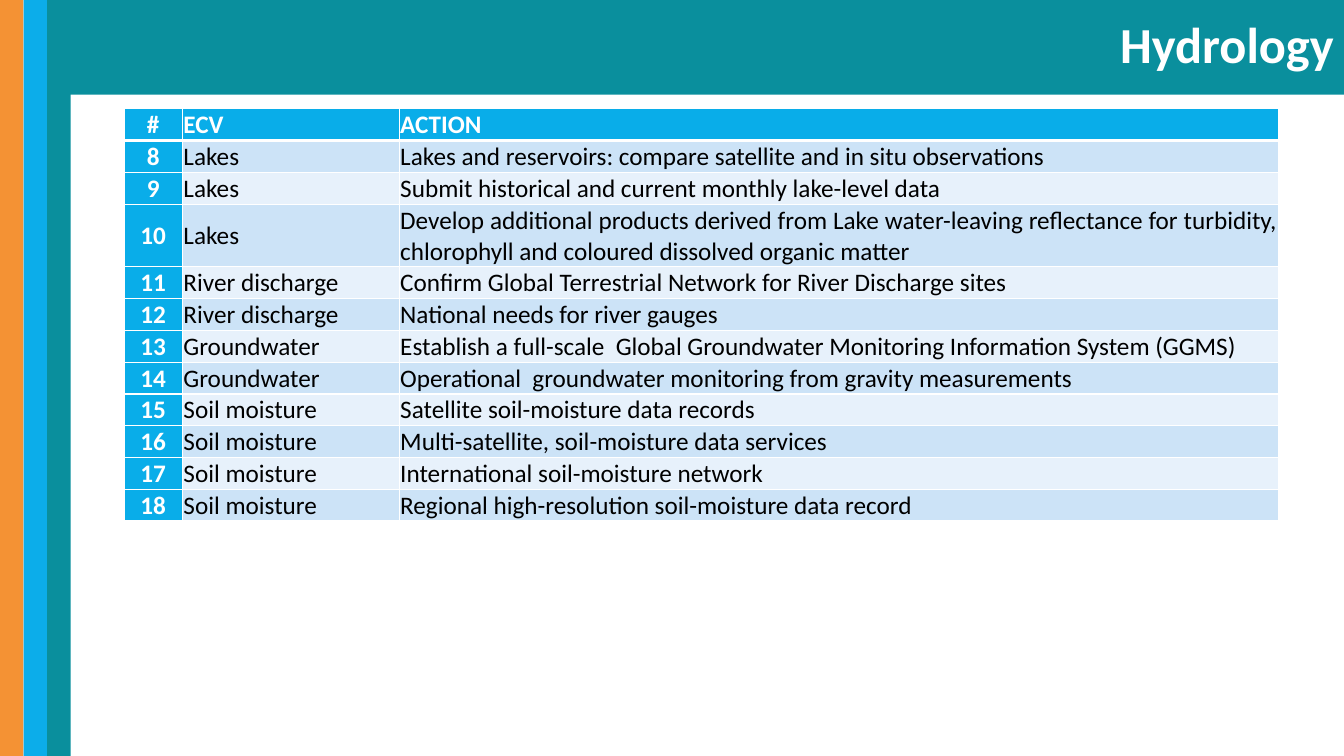
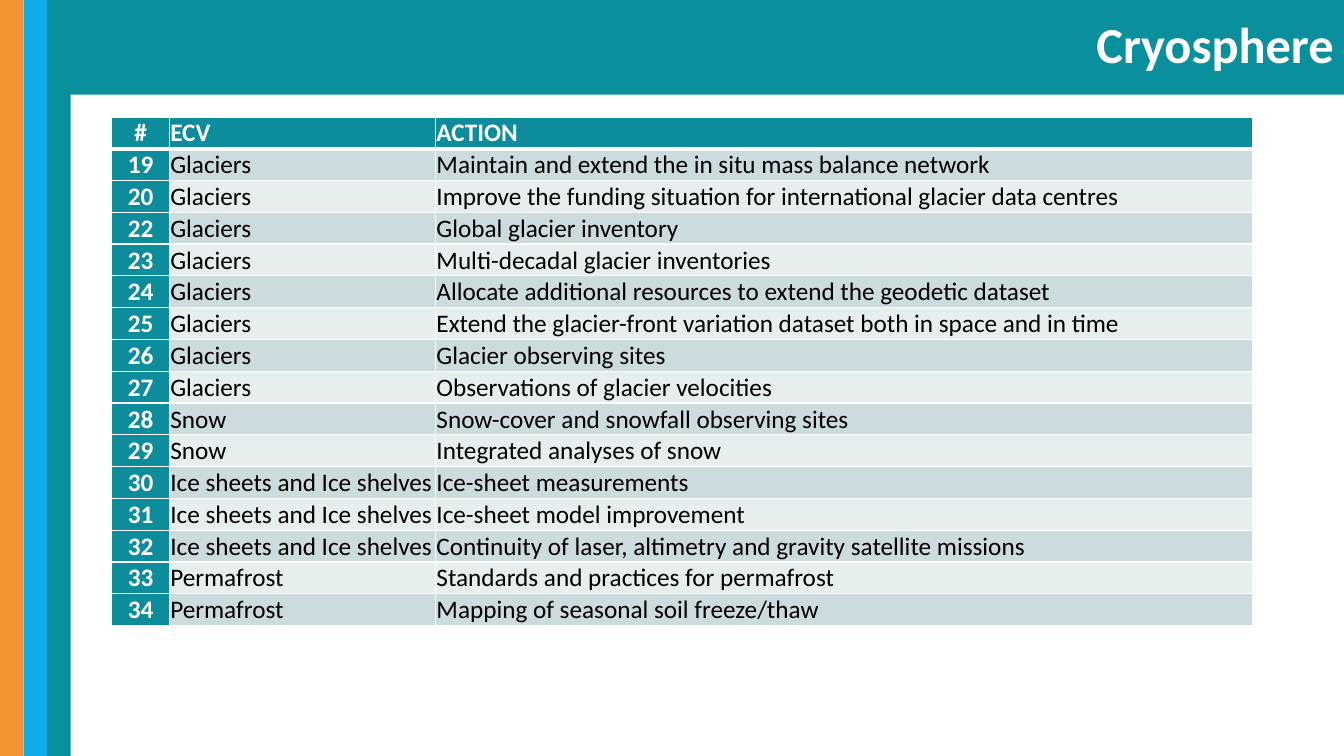
from dataclasses import dataclass

from lxml import etree
from pptx import Presentation
from pptx.dml.color import RGBColor
from pptx.enum.shapes import MSO_SHAPE
from pptx.enum.text import MSO_ANCHOR, PP_ALIGN
from pptx.oxml.ns import qn
from pptx.util import Inches, Pt

RECTANGLE = MSO_SHAPE.RECTANGLE
MIDDLE, BOTTOM = MSO_ANCHOR.MIDDLE, MSO_ANCHOR.BOTTOM
LEFT, CENTER, RIGHT, JUSTIFY = (
    PP_ALIGN.LEFT, PP_ALIGN.CENTER, PP_ALIGN.RIGHT, PP_ALIGN.JUSTIFY)
TITLE_ONLY = 5


@dataclass(frozen=True)
class Theme:
    font: str = "Calibri"
    title_size: int = 36
    table_size: int = 18
    white: str = "FFFFFF"
    black: str = "000000"
    teal: str = "0A8F9D"
    stripes: tuple = ("F49234", "0CADEA", "0A8F9D")
    thin_line: int = 1
    thick_line: int = 3


@dataclass(frozen=True)
class TablePalette:
    accent: str
    dark_band: str
    light_band: str


THEME = Theme()
BLUE_TABLE = TablePalette("09ADE9", "CCE3F7", "E7F1FB")
TEAL_TABLE = TablePalette("0D8D9C", "CCDBDE", "E7EEEF")

SLIDE_WIDTH, SLIDE_HEIGHT = Inches(13.33), Inches(7.5)
STRIPES_BOX = (0, 0, Inches(0.7), SLIDE_HEIGHT)
TITLE_LEFT = Inches(0.57)
TITLE_BOX = (TITLE_LEFT, 0, SLIDE_WIDTH - TITLE_LEFT, Inches(0.94))
LINE_HEIGHT = Inches(0.31)
CELL_INSET = Inches(0.01)

HEADER = ("#", "ECV", "ACTION")
HYDROLOGY = [
    ("8", "Lakes", "Lakes and reservoirs: compare satellite and in situ observations"),
    ("9", "Lakes", "Submit historical and current monthly lake-level data"),
    ("10", "Lakes", "Develop additional products derived from Lake water-leaving "
     "reflectance for turbidity, chlorophyll and coloured dissolved organic matter"),
    ("11", "River discharge", "Confirm Global Terrestrial Network for River Discharge sites"),
    ("12", "River discharge", "National needs for river gauges"),
    ("13", "Groundwater",
     "Establish a full-scale  Global Groundwater Monitoring Information System (GGMS)"),
    ("14", "Groundwater", "Operational  groundwater monitoring from gravity measurements"),
    ("15", "Soil moisture", "Satellite soil-moisture data records"),
    ("16", "Soil moisture", "Multi-satellite, soil-moisture data services"),
    ("17", "Soil moisture", "International soil-moisture network"),
    ("18", "Soil moisture", "Regional high-resolution soil-moisture data record"),
]
CRYOSPHERE = [
    ("19", "Glaciers", "Maintain and extend the in situ mass balance network"),
    ("20", "Glaciers", "Improve the funding situation for international glacier data centres"),
    ("22", "Glaciers", "Global glacier inventory"),
    ("23", "Glaciers", "Multi-decadal glacier inventories"),
    ("24", "Glaciers", "Allocate additional resources to extend the geodetic dataset"),
    ("25", "Glaciers", "Extend the glacier-front variation dataset both in space and in time"),
    ("26", "Glaciers", "Glacier observing sites"),
    ("27", "Glaciers", "Observations of glacier velocities"),
    ("28", "Snow", "Snow-cover and snowfall observing sites"),
    ("29", "Snow", "Integrated analyses of snow"),
    ("30", "Ice sheets and Ice shelves", "Ice-sheet measurements"),
    ("31", "Ice sheets and Ice shelves", "Ice-sheet model improvement"),
    ("32", "Ice sheets and Ice shelves",
     "Continuity of laser, altimetry and gravity satellite missions"),
    ("33", "Permafrost", "Standards and practices for permafrost"),
    ("34", "Permafrost", "Mapping of seasonal soil freeze/thaw"),
]


def fill_solid(target, color):
    target.fill.solid()
    target.fill.fore_color.rgb = RGBColor.from_string(color)


def write_text(frame, text, *, size, color, bold=False, align=LEFT, line_spacing=None):
    para = frame.paragraphs[0]
    para.alignment = align
    para.line_spacing = line_spacing
    span = para.add_run()
    span.text = text
    span.font.name = THEME.font
    span.font.size = Pt(size)
    span.font.bold = bold
    span.font.color.rgb = RGBColor.from_string(color)


def add_layout_stripes(layout, page, box):
    """Draw the stripes on a page, then move them to the layout it shares."""
    left, top, width, height = box
    stripe_width = width // len(THEME.stripes)
    for index, color in enumerate(THEME.stripes):
        stripe = page.shapes.add_shape(
            RECTANGLE, left + index * stripe_width, top, stripe_width, height)
        stripe.shadow.inherit = False
        stripe.line.fill.background()
        fill_solid(stripe, color)
        layout.shapes.element.append(stripe.element)


def format_title(page, text, box):
    title = page.shapes.title
    title.left, title.top, title.width, title.height = box
    fill_solid(title, THEME.teal)
    title.text_frame.vertical_anchor = MIDDLE
    write_text(title.text_frame, text, size=THEME.title_size, color=THEME.white,
               bold=True, align=RIGHT, line_spacing=0.9)


def set_borders(cell, *, top, bottom):
    properties = cell._tc.get_or_add_tcPr()
    widths = {"a:lnL": THEME.thin_line, "a:lnR": THEME.thin_line,
              "a:lnT": top, "a:lnB": bottom}
    for tag, width in widths.items():
        line = etree.SubElement(properties, qn(tag), w=str(Pt(width)))
        solid = etree.SubElement(line, qn("a:solidFill"))
        etree.SubElement(solid, qn("a:srgbClr"), val=THEME.white)


def format_cell(cell, text, row, column, palette, anchor):
    is_header = row == 0
    is_accent = is_header or column == 0
    band = palette.dark_band if row % 2 else palette.light_band
    body_align = (CENTER, LEFT, JUSTIFY)[column]
    set_borders(cell,
                top=THEME.thick_line if row == 1 else THEME.thin_line,
                bottom=THEME.thick_line if is_header else THEME.thin_line)
    fill_solid(cell, palette.accent if is_accent else band)
    cell.margin_left = cell.margin_right = cell.margin_top = CELL_INSET
    cell.margin_bottom = 0
    cell.vertical_anchor = MIDDLE if column == 2 and not is_header else anchor
    write_text(cell.text_frame, text, size=THEME.table_size, bold=is_accent,
               color=THEME.white if is_accent else THEME.black,
               align=LEFT if is_header and column else body_align)


def add_action_table(page, actions, left, top, column_widths, palette, anchor):
    rows = [HEADER, *actions]
    widths = [Inches(width) for width in column_widths]
    table = page.shapes.add_table(len(rows), len(HEADER), left, top, sum(widths),
                                  LINE_HEIGHT * len(rows)).table
    table.first_col = True
    table.horz_banding = False
    for column, width in zip(table.columns, widths):
        column.width = width
    for row, texts in enumerate(rows):
        table.rows[row].height = LINE_HEIGHT
        for column, text in enumerate(texts):
            format_cell(table.cell(row, column), text, row, column, palette, anchor)


def main():
    deck = Presentation()
    deck.slide_width, deck.slide_height = SLIDE_WIDTH, SLIDE_HEIGHT
    layout = deck.slide_layouts[TITLE_ONLY]

    hydrology = deck.slides.add_slide(layout)
    add_layout_stripes(layout, hydrology, STRIPES_BOX)
    format_title(hydrology, "Hydrology", TITLE_BOX)
    add_action_table(hydrology, HYDROLOGY, Inches(1.23), Inches(1.08),
                     (0.58, 2.15, 8.72), BLUE_TABLE, MIDDLE)

    cryosphere = deck.slides.add_slide(layout)
    format_title(cryosphere, "Cryosphere", TITLE_BOX)
    add_action_table(cryosphere, CRYOSPHERE, Inches(1.11), Inches(1.16),
                     (0.57, 2.64, 8.1), TEAL_TABLE, BOTTOM)

    deck.save("out.pptx")


if __name__ == "__main__":
    main()
